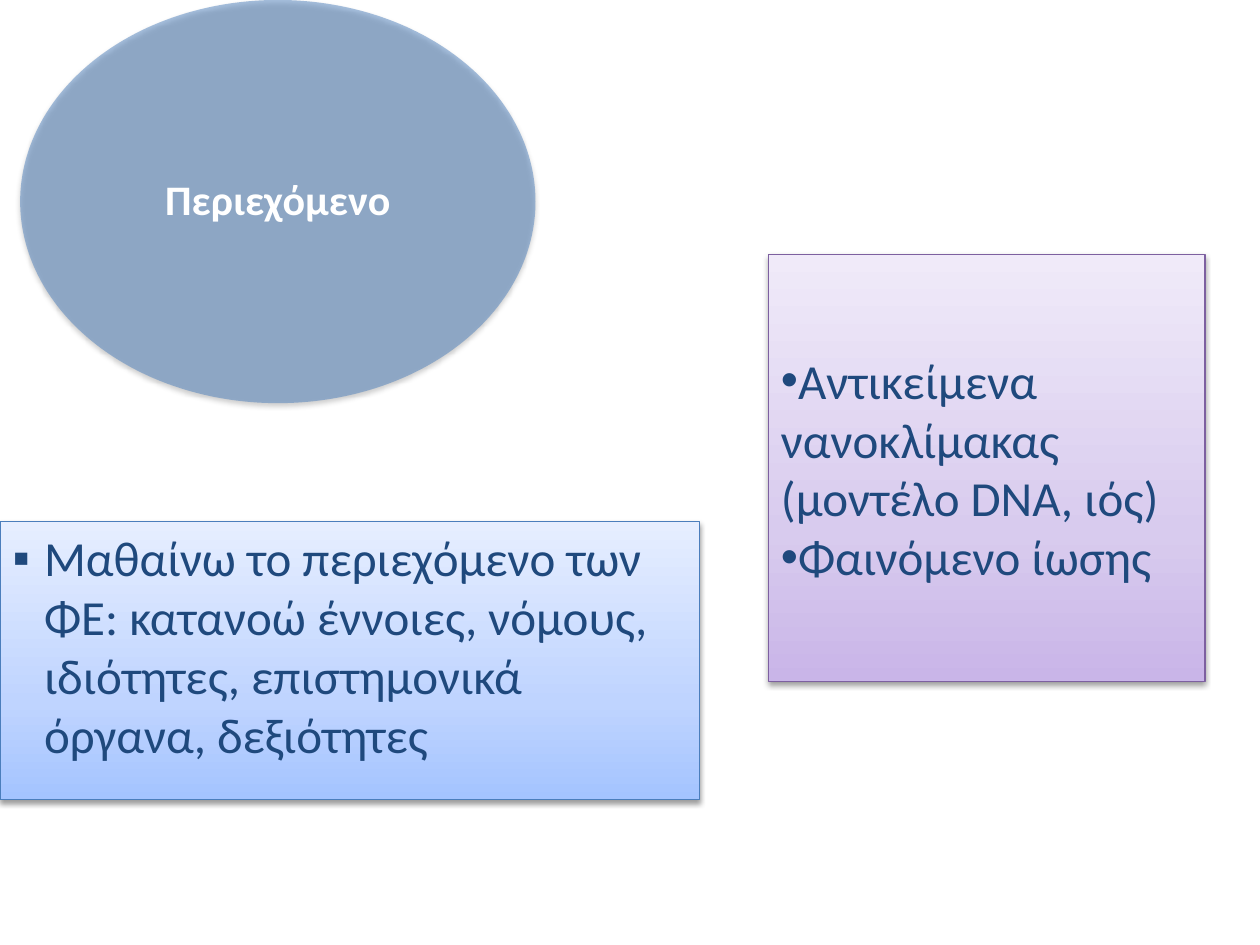
from copy import deepcopy

from lxml.etree import SubElement
from pptx import Presentation
from pptx.dml.color import RGBColor
from pptx.enum.shapes import MSO_SHAPE
from pptx.enum.text import MSO_ANCHOR, MSO_AUTO_SIZE, PP_ALIGN
from pptx.oxml.ns import qn
from pptx.util import Pt


def color(code):
    return RGBColor.from_string(code)


def apply(item, values):
    for name, value in values.items():
        setattr(item, name, value)


class Deck:
    font = "Calibri"
    ink = "1F497D"
    white = "FFFFFF"

    def __init__(self, deck):
        self.slide = deck.slides.add_slide(deck.slide_layouts[1])

    def place(self, shape, box):
        names = ("left", "top", "width", "height")
        apply(shape, dict(zip(names, map(Pt, box))))

    def shade(self, shape):
        shape.shadow.inherit = False
        effect = shape._element.spPr.find(qn("a:effectLst"))
        outer = SubElement(effect, qn("a:outerShdw"), blurRad=str(Pt(3.1)),
                           dist=str(Pt(1.6)), dir="5400000", rotWithShape="0")
        tone = SubElement(outer, qn("a:srgbClr"), val="000000")
        SubElement(tone, qn("a:alpha"), val="38000")

    def blend(self, shape, codes, edge):
        shape.fill.gradient()
        shape.fill.gradient_angle = 90
        stops = shape._element.spPr.find(".//" + qn("a:gsLst"))
        stops.append(deepcopy(stops[0]))
        for stop, code, spot in zip(shape.fill.gradient_stops, codes, (0, 0.35, 1)):
            stop.color.rgb = color(code)
            stop.position = spot
        shape.line.color.rgb = color(edge)
        shape.line.width = Pt(0.75)
        self.shade(shape)

    def label(self, shape, lines, frame, para, font, ink, mark=None, hang=0):
        text = shape.text_frame
        text.text = "\n".join(lines)
        apply(text, {"word_wrap": True, "auto_size": MSO_AUTO_SIZE.NONE, **frame})
        for line in text.paragraphs:
            apply(line, para)
            apply(line.runs[0].font, {"name": self.font, **font})
            line.runs[0].font.color.rgb = color(ink)
            if mark:
                props = line._p.get_or_add_pPr()
                props.set("marL", str(Pt(hang)))
                props.set("indent", str(-Pt(hang)))
                SubElement(props, qn("a:buFont"), typeface="Arial")
                SubElement(props, qn("a:buChar"), char=mark)

    def oval(self, box, code):
        shape = self.slide.shapes.add_shape(MSO_SHAPE.OVAL, *map(Pt, box))
        shape.fill.solid()
        shape.fill.fore_color.rgb = color(code)
        tone = shape._element.spPr.find(".//" + qn("a:srgbClr"))
        SubElement(tone, qn("a:alpha"), val="50000")
        shape.line.fill.background()
        self.shade(shape)

    def title(self, box, words):
        shape = self.slide.shapes.title
        self.place(shape, box)
        sides = ("left", "top", "right", "bottom")
        frame = {"margin_" + side: 0 for side in sides}
        frame["vertical_anchor"] = MSO_ANCHOR.MIDDLE
        para = {"alignment": PP_ALIGN.CENTER, "line_spacing": 0.9,
                "space_after": Pt(8.4)}
        self.label(shape, [words], frame, para,
                   {"size": Pt(24), "bold": True}, self.white)
        self.slide.shapes._spTree.append(shape._element)

    def body(self, box, lines, codes, edge):
        shape = self.slide.placeholders[1]
        self.place(shape, box)
        self.blend(shape, codes, edge)
        self.label(shape, lines, {"vertical_anchor": MSO_ANCHOR.TOP},
                   {"alignment": PP_ALIGN.LEFT, "space_before": Pt(15)},
                   {"size": Pt(28)}, self.ink, "▪", 18)
        self.slide.shapes._spTree.append(shape._element)

    def panel(self, box, lines, codes, edge):
        shape = self.slide.shapes.add_shape(MSO_SHAPE.RECTANGLE, *map(Pt, box))
        self.blend(shape, codes, edge)
        self.label(shape, lines, {"vertical_anchor": MSO_ANCHOR.MIDDLE},
                   {"alignment": PP_ALIGN.LEFT}, {"size": Pt(28)}, self.ink, "•")


def main():
    show = Presentation()
    apply(show, {"slide_width": Pt(720), "slide_height": Pt(540)})
    deck = Deck(show)
    topic = (11.5, 0, 294.5, 230.4)
    deck.oval(topic, "4F81BD")
    deck.title(topic, "Περιεχόμενο")
    deck.body((0, 298, 399.6, 158.8),
              ["Μαθαίνω το περιεχόμενο των ΦΕ: κατανοώ έννοιες, νόμους, "
               "ιδιότητες, επιστημονικά όργανα, δεξιότητες"],
              ("A4C4FF", "BFD4FF", "E6EEFF"), "4B7EBC")
    deck.panel((439.2, 145.4, 249.4, 244),
               ["Αντικείμενα νανοκλίμακας (μοντέλο DNA, ιός)",
                "Φαινόμενο ίωσης"],
               ("C9B5E8", "D8CBEE", "F0EAF9"), "7D60A0")
    show.save("out.pptx")


if __name__ == "__main__":
    main()
